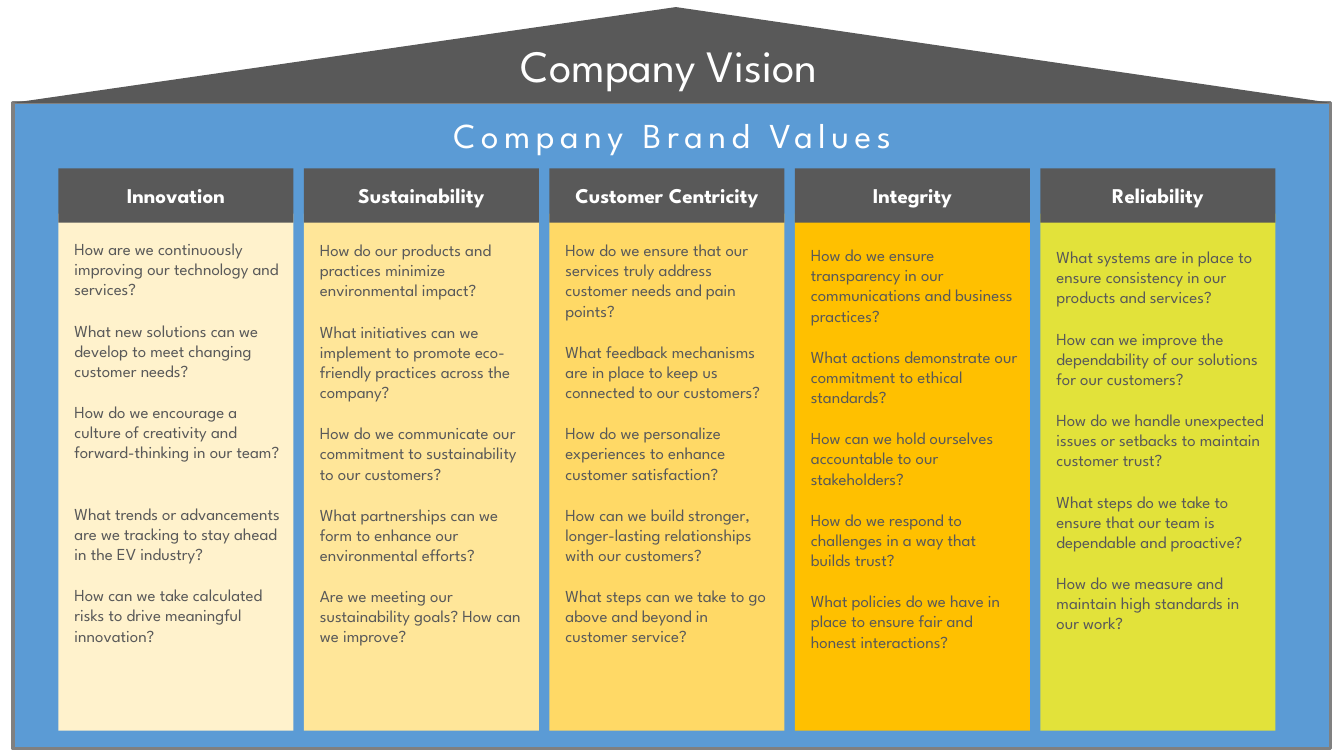
import pptx
import pptx.dml.color
import pptx.enum.shapes
import pptx.enum.text
import pptx.util

Inches = pptx.util.Inches
Pt = pptx.util.Pt
Shape = pptx.enum.shapes.MSO_SHAPE
Anchor = pptx.enum.text.MSO_ANCHOR
Align = pptx.enum.text.PP_ALIGN

FONT = "League Spartan"
COLORS = {
    "slate": "595959",
    "blue": "5B9BD5",
    "border": "808080",
    "white": "FFFFFF",
    "cream": "FFF2CC",
    "sand": "FFE699",
    "gold": "FFD966",
    "amber": "FFC000",
    "lime": "E2E23A",
}

# House and column grid, in inches
HOUSE_LEFT, HOUSE_WIDTH = 0.13, 13.07
ROOF_TOP, WALL_TOP, WALL_HEIGHT = 0.07, 1.02, 6.41
FIRST_LEFT, LAST_LEFT, COLUMN_WIDTH = 0.58, 10.32, 2.33
HEADER_TOP, HEADER_HEIGHT = 1.67, 0.54
PANEL_TOP, PANEL_HEIGHT = 2.12, 5.13
QUESTION_INDENT, QUESTION_WIDTH, QUESTION_HEIGHT = 0.06, 2.26, 4.78
QUESTION_GAP = 15
EXTRA_LINE = 14.5

# Value, panel colour, top of the questions, questions
VALUES = [
    ("Innovation", "cream", 2.32, [
        "How are we continuously improving our technology and services?",
        "What new solutions can we develop to meet changing customer needs?",
        "How do we encourage a culture of creativity and forward-thinking in our team?",
        "What trends or advancements are we tracking to stay ahead in the EV industry?",
        "How can we take calculated risks to drive meaningful innovation?",
    ]),
    ("Sustainability", "sand", 2.33, [
        "How do our products and practices minimize environmental impact?",
        "What initiatives can we implement to promote eco-friendly practices across the company?",
        "How do we communicate our commitment to sustainability to our customers?",
        "What partnerships can we form to enhance our environmental efforts?",
        "Are we meeting our sustainability goals? How can we improve?",
    ]),
    ("Customer Centricity", "gold", 2.33, [
        "How do we ensure that our services truly address customer needs and pain points?",
        "What feedback mechanisms are in place to keep us connected to our customers?",
        "How do we personalize experiences to enhance customer satisfaction?",
        "How can we build stronger, longer-lasting relationships with our customers?",
        "What steps can we take to go above and beyond in customer service?",
    ]),
    ("Integrity", "amber", 2.38, [
        "How do we ensure transparency in our communications and business practices?",
        "What actions demonstrate our commitment to ethical standards?",
        "How can we hold ourselves accountable to our stakeholders?",
        "How do we respond to challenges in a way that builds trust?",
        "What policies do we have in place to ensure fair and honest interactions?",
    ]),
    ("Reliability", "lime", 2.4, [
        "What systems are in place to ensure consistency in our products and services?",
        "How can we improve the dependability of our solutions for our customers?",
        "How do we handle unexpected issues or setbacks to maintain customer trust?",
        "What steps do we take to ensure that our team is dependable and proactive?",
        "How do we measure and maintain high standards in our work?",
    ]),
]

deck = pptx.Presentation()
deck.slide_width, deck.slide_height = Inches(13.33), Inches(7.5)
page = deck.slides.add_slide(deck.slide_layouts[0])


def add_block(kind, left, top, width, height, color):
    block = page.shapes.add_shape(
        kind, Inches(left), Inches(top), Inches(width), Inches(height))
    block.shadow.inherit = False
    block.fill.solid()
    block.fill.fore_color.rgb = pptx.dml.color.RGBColor.from_string(COLORS[color])
    block.line.fill.background()
    return block


def write(box, lines, size, color, align, bold=False):
    """Fill a box with one paragraph per line and format the runs."""
    frame = box.text_frame
    frame.text = "\n".join(lines)
    frame.word_wrap = True
    frame.auto_size = pptx.enum.text.MSO_AUTO_SIZE.NONE
    frame.vertical_anchor = Anchor.TOP
    for para in frame.paragraphs:
        para.alignment = align
        para.space_before = Pt(0)
        for span in para.runs:
            span.font.name = FONT
            span.font.size = Pt(size)
            span.font.bold = bold
            span.font.color.rgb = pptx.dml.color.RGBColor.from_string(COLORS[color])


# House
wall = add_block(Shape.RECTANGLE, HOUSE_LEFT, WALL_TOP, HOUSE_WIDTH, WALL_HEIGHT, "blue")
wall.line.color.rgb = pptx.dml.color.RGBColor.from_string(COLORS["border"])
wall.line.width = Pt(2.25)
roof = add_block(Shape.ISOSCELES_TRIANGLE, HOUSE_LEFT, ROOF_TOP, HOUSE_WIDTH,
                 WALL_TOP - ROOF_TOP, "slate")
roof.adjustments[0] = 0.503

# One column per brand value
pitch = (LAST_LEFT - FIRST_LEFT) / (len(VALUES) - 1)
for column, (name, color, question_top, questions) in enumerate(VALUES):
    left = FIRST_LEFT + column * pitch
    add_block(Shape.RECTANGLE, left, PANEL_TOP, COLUMN_WIDTH, PANEL_HEIGHT, color)
    header = add_block(Shape.RECTANGLE, left, HEADER_TOP, COLUMN_WIDTH, HEADER_HEIGHT, "slate")
    write(header, [name], 15, "white", Align.CENTER, bold=True)
    header.text_frame.vertical_anchor = Anchor.MIDDLE

    box = page.shapes.add_textbox(
        Inches(left + QUESTION_INDENT), Inches(question_top),
        Inches(QUESTION_WIDTH), Inches(QUESTION_HEIGHT))
    write(box, questions, 12, "slate", Align.LEFT)
    for row, para in enumerate(box.text_frame.paragraphs):
        wide_gap = name == "Innovation" and row == 2
        para.space_after = Pt(QUESTION_GAP + EXTRA_LINE * wide_gap)

# Headings, brought in front of the house
title, subtitle = page.placeholders
for heading, text, size, area in [
    (title, "Company Vision", 32, (4.18, 0.32, 4.92, 0.64)),
    (subtitle, "Company Brand Values", 25, (0.18, 1.08, 12.98, 0.52)),
]:
    heading.left, heading.top, heading.width, heading.height = map(Inches, area)
    write(heading, [text], size, "white", Align.CENTER)
    page.shapes.element.append(heading.element)

# Letter spacing of 4 points
subtitle_span = subtitle.text_frame.paragraphs[0].runs[0]
subtitle_span._r.get_or_add_rPr().set("spc", "400")

deck.save("out.pptx")
